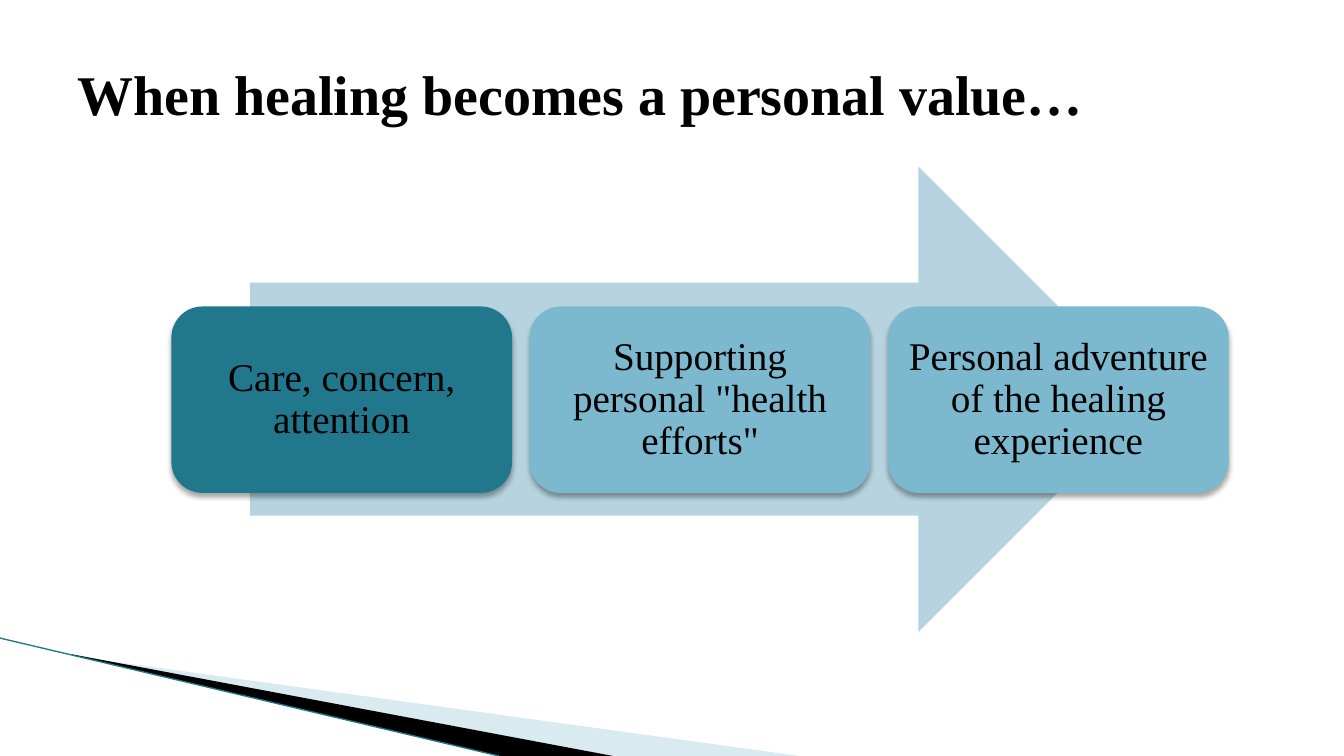
from pptx import Presentation
from pptx.dml.color import RGBColor
from pptx.enum.shapes import MSO_CONNECTOR, MSO_SHAPE
from pptx.enum.text import MSO_ANCHOR, PP_ALIGN
from pptx.oxml import parse_xml
from pptx.oxml.ns import nsdecls, qn
from pptx.util import Inches, Pt
from lxml.etree import SubElement

WIDE, HIGH = Inches(13.333), Inches(7.5)
COLS, ROWS = 160, 90
FONT = "Times New Roman"
STEPS = [
    ("Care, concern, attention", "21788D"),
    ('Supporting personal "health efforts"', "7DB9CE"),
    ("Personal adventure of the healing experience", "7DB9CE"),
]


def col(n):
    return round(WIDE * n / COLS)


def row(n):
    return round(HIGH * n / ROWS)


def color(hue):
    return RGBColor.from_string(hue)


def paint(shape, hue, alpha=100):
    shape.shadow.inherit = False
    shape.fill.solid()
    shape.fill.fore_color.rgb = color(hue)
    shape.line.fill.background()
    if alpha < 100:
        tone = shape.fill._xPr.find(qn("a:solidFill"))[0]
        SubElement(tone, qn("a:alpha")).set("val", str(alpha * 1000))


def write(shape, text, size, bold=False, align=PP_ALIGN.LEFT, space=1.0, inset=0.1):
    frame = shape.text_frame
    frame.word_wrap = True
    frame.vertical_anchor = MSO_ANCHOR.MIDDLE
    frame.margin_left = frame.margin_right = Inches(inset)
    frame.margin_top = frame.margin_bottom = Inches(inset)
    para = frame.paragraphs[0]
    para.text = text
    para.alignment = align
    para.line_spacing = space
    font = para.runs[0].font
    font.name, font.size, font.bold = FONT, Pt(size), bold
    font.color.rgb = color("000000")


def block(slide, kind, left, top, width, height, hue):
    shape = slide.shapes.add_shape(kind, col(left), row(top), col(width), row(height))
    paint(shape, hue)
    return shape


def shade(shape):
    props = shape._element.spPr
    props.remove(props.find(qn("a:effectLst")))
    props.append(parse_xml(
        f'<a:effectLst {nsdecls("a")}>'
        '<a:outerShdw blurRad="50800" dist="38100" dir="5400000" rotWithShape="0">'
        '<a:srgbClr val="000000"><a:alpha val="35000"/></a:srgbClr>'
        '</a:outerShdw></a:effectLst>'))


def wedge(slide, points, hue, alpha=100):
    spots = [(col(x), row(y)) for x, y in points]
    pen = slide.shapes.build_freeform(*spots[0])
    pen.add_line_segments(spots[1:], close=True)
    paint(pen.convert_to_shape(), hue, alpha)


def rule(slide, start, end, hue, width):
    line = slide.shapes.add_connector(
        MSO_CONNECTOR.STRAIGHT, col(start[0]), row(start[1]), col(end[0]), row(end[1]))
    line.line.color.rgb = color(hue)
    line.line.width = Pt(width)
    SubElement(line._element.spPr, qn("a:effectLst"))


def corner(slide):
    wedge(slide, [(8.76, 78.12), (95.16, 90), (72.96, 90), (8.76, 78)], "A0CBDC", 40)
    wedge(slide, [(8.52, 77.88), (73, 90), (59.5, 90), (8.64, 78)], "000000")
    rule(slide, (0, 75.96), (59.4, 90), "21788D", 0.95)


def head(slide, text):
    title = slide.shapes.title
    title.left, title.top, title.width, title.height = col(8), row(3.6), col(144), row(15)
    write(title, text, 40, bold=True)


def flow(slide):
    block(slide, MSO_SHAPE.RIGHT_ARROW, 29.76, 19.8, 107.28, 55.44, "B6D3DF")
    for i, (text, hue) in enumerate(STEPS):
        card = block(slide, MSO_SHAPE.ROUNDED_RECTANGLE,
                     20.4 + 42.66 * i, 36.48, 40.56, 22.2, hue)
        shade(card)
        write(card, text, 28, align=PP_ALIGN.CENTER, space=0.9, inset=0.11)


def main():
    deck = Presentation()
    deck.slide_width, deck.slide_height = WIDE, HIGH
    slide = deck.slides.add_slide(deck.slide_layouts[5])
    corner(slide)
    flow(slide)
    head(slide, "When healing becomes a personal value…")
    deck.save("out.pptx")


if __name__ == "__main__":
    main()
